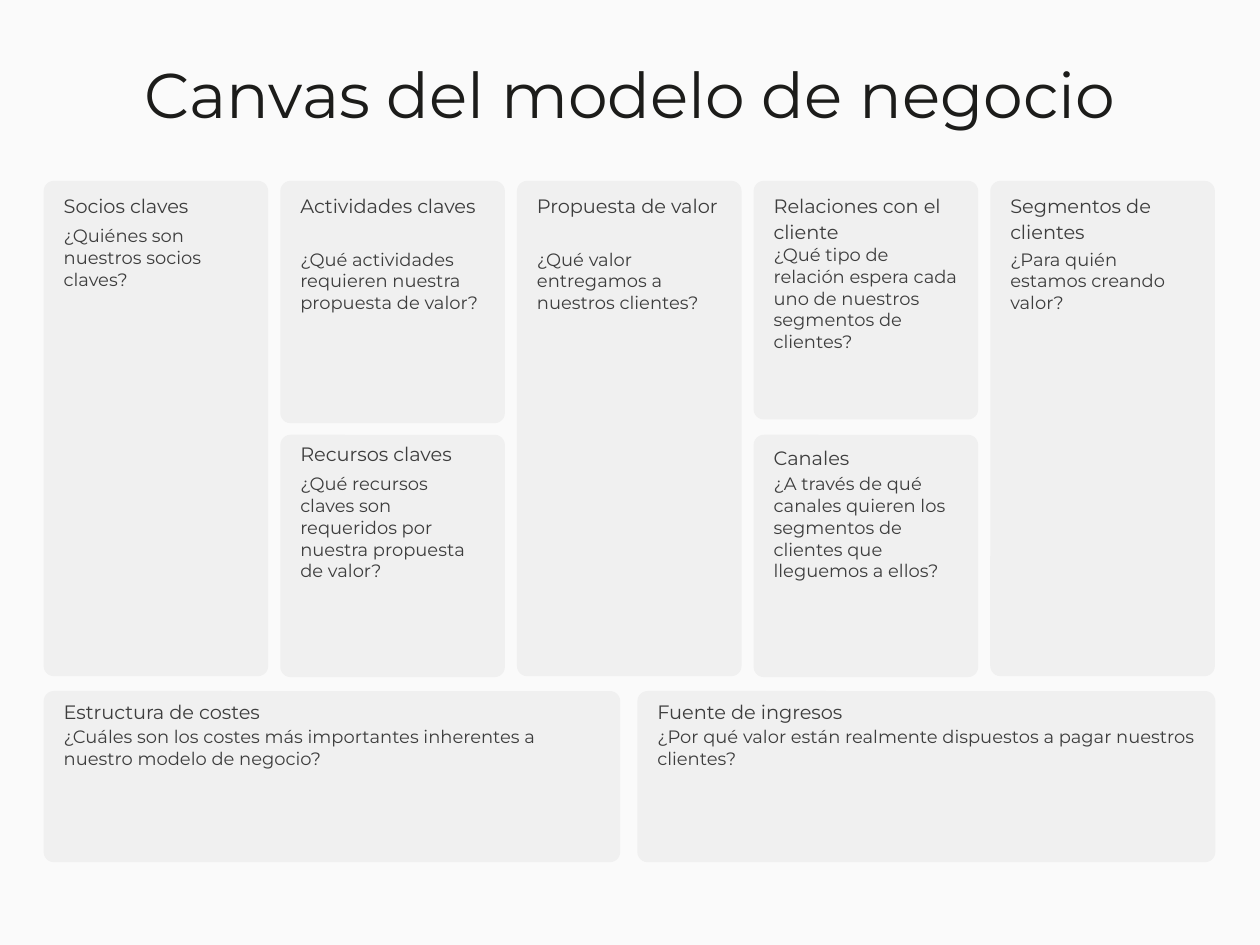
from pptx import Presentation
from pptx import util as u
from pptx.dml.color import RGBColor
from pptx.enum import shapes, text

LEFT, TOP, PITCH = 0.94, 3.89, 5.09
NARROW, FULL, HALF = 4.83, 10.65, 5.21
LOWER_TOP, BOTTOM_TOP, BOTTOM_HEIGHT = 9.35, 14.86, 3.68
PADDING = 0.43
COLUMNS = [LEFT + PITCH * i for i in range(5)]

BLOCKS = [
    ((COLUMNS[0], TOP, NARROW, FULL), ("Socios claves", 4.14, 1),
     ("¿Quiénes son nuestros socios claves?", 4.83, 3)),
    ((COLUMNS[1], TOP, NARROW, HALF), ("Actividades claves", 4.14, 2),
     ("¿Qué actividades requieren nuestra propuesta de valor?", 5.33, 3)),
    ((COLUMNS[1], LOWER_TOP, NARROW, HALF), ("Recursos claves", 9.47, 1),
     ("¿Qué recursos claves son requeridos por nuestra propuesta de valor?", 10.16, 5)),
    ((COLUMNS[2], TOP, NARROW, FULL), ("Propuesta de valor", 4.14, 2),
     ("¿Qué valor entregamos a nuestros clientes?", 5.33, 3)),
    ((COLUMNS[3], TOP, NARROW, 5.13), ("Relaciones con el cliente", 4.14, 2),
     ("¿Qué tipo de relación espera cada uno de nuestros segmentos de clientes?", 5.23, 5)),
    ((COLUMNS[3], LOWER_TOP, NARROW, HALF), ("Canales", 9.55, 1),
     ("¿A través de qué canales quieren los segmentos de clientes que lleguemos a ellos?", 10.16, 5)),
    ((COLUMNS[4], TOP, NARROW, FULL), ("Segmentos de clientes", 4.14, 2),
     ("¿Para quién estamos creando valor?", 5.33, 3)),
    ((LEFT, BOTTOM_TOP, 12.4, BOTTOM_HEIGHT), ("Estructura de costes", 15.01, 1),
     ("¿Cuáles son los costes más importantes inherentes a nuestro modelo de negocio?", 15.6, 2)),
    ((13.71, BOTTOM_TOP, 12.43, BOTTOM_HEIGHT), ("Fuente de ingresos", 15.01, 1),
     ("¿Por qué valor están realmente dispuestos a pagar nuestros clientes?", 15.6, 2)),
]


def color(value):
    return RGBColor.from_string(value)


def apply(target, values):
    for name, value in values.items():
        setattr(target, name, value)


class Canvas:
    font_name = "Montserrat"
    background, card_fill = "FAFAFA", "F0F0F0"
    title_ink, body_ink = "1C1C1A", "3D3D3D"
    radius = 0.22
    title_style = {"size": 38.5, "spacing": 46.2}
    heading_style = {"size": 11.8, "spacing": 15.4}
    question_style = {"size": 10.9, "spacing": 13.3}
    frame_format = {
        "margin_left": 0, "margin_top": 0, "margin_right": 0, "margin_bottom": 0,
        "word_wrap": True, "vertical_anchor": text.MSO_ANCHOR.TOP,
    }

    def __init__(self, slide):
        self.slide = slide
        fill = slide.background.fill
        fill.solid()
        fill.fore_color.rgb = color(self.background)

    def set_words(self, shape, words, style, ink, alignment, auto_size):
        frame = shape.text_frame
        apply(frame, {**self.frame_format, "auto_size": auto_size})
        paragraph = frame.paragraphs[0]
        apply(paragraph, {"text": words, "alignment": alignment,
                          "line_spacing": u.Pt(style["spacing"])})
        font = paragraph.runs[0].font
        apply(font, {"name": self.font_name, "size": u.Pt(style["size"])})
        font.color.rgb = color(ink)

    def title(self, words, left, top, width, height):
        shape = self.slide.shapes.title
        apply(shape, {"left": u.Cm(left), "top": u.Cm(top),
                      "width": u.Cm(width), "height": u.Cm(height)})
        self.set_words(shape, words, self.title_style, self.title_ink,
                       text.PP_ALIGN.CENTER, text.MSO_AUTO_SIZE.NONE)

    def card(self, left, top, width, height):
        shape = self.slide.shapes.add_shape(
            shapes.MSO_SHAPE.ROUNDED_RECTANGLE,
            u.Cm(left), u.Cm(top), u.Cm(width), u.Cm(height))
        shape.adjustments[0] = self.radius / min(width, height)
        shape.shadow.inherit = False
        shape.fill.solid()
        shape.fill.fore_color.rgb = color(self.card_fill)
        shape.line.fill.background()

    def label(self, words, left, top, width, lines, style):
        shape = self.slide.shapes.add_textbox(
            u.Cm(left), u.Cm(top), u.Cm(width), u.Pt(style["spacing"] * lines))
        self.set_words(shape, words, style, self.body_ink,
                       text.PP_ALIGN.LEFT, text.MSO_AUTO_SIZE.SHAPE_TO_FIT_TEXT)

    def block(self, card, heading, question):
        self.card(*card)
        left, width = card[0] + PADDING, card[2] - 2 * PADDING + 0.02
        for (words, top, lines), style in ((heading, self.heading_style),
                                           (question, self.question_style)):
            self.label(words, left, top, width, lines, style)


def main():
    presentation = Presentation()
    apply(presentation, {"slide_width": u.Cm(27.1), "slide_height": u.Cm(20.32)})
    canvas = Canvas(presentation.slides.add_slide(presentation.slide_layouts[5]))
    canvas.title("Canvas del modelo de negocio", 2.03, 1.19, 23.04, 1.65)
    for card, heading, question in BLOCKS:
        canvas.block(card, heading, question)
    presentation.save("out.pptx")


if __name__ == "__main__":
    main()
